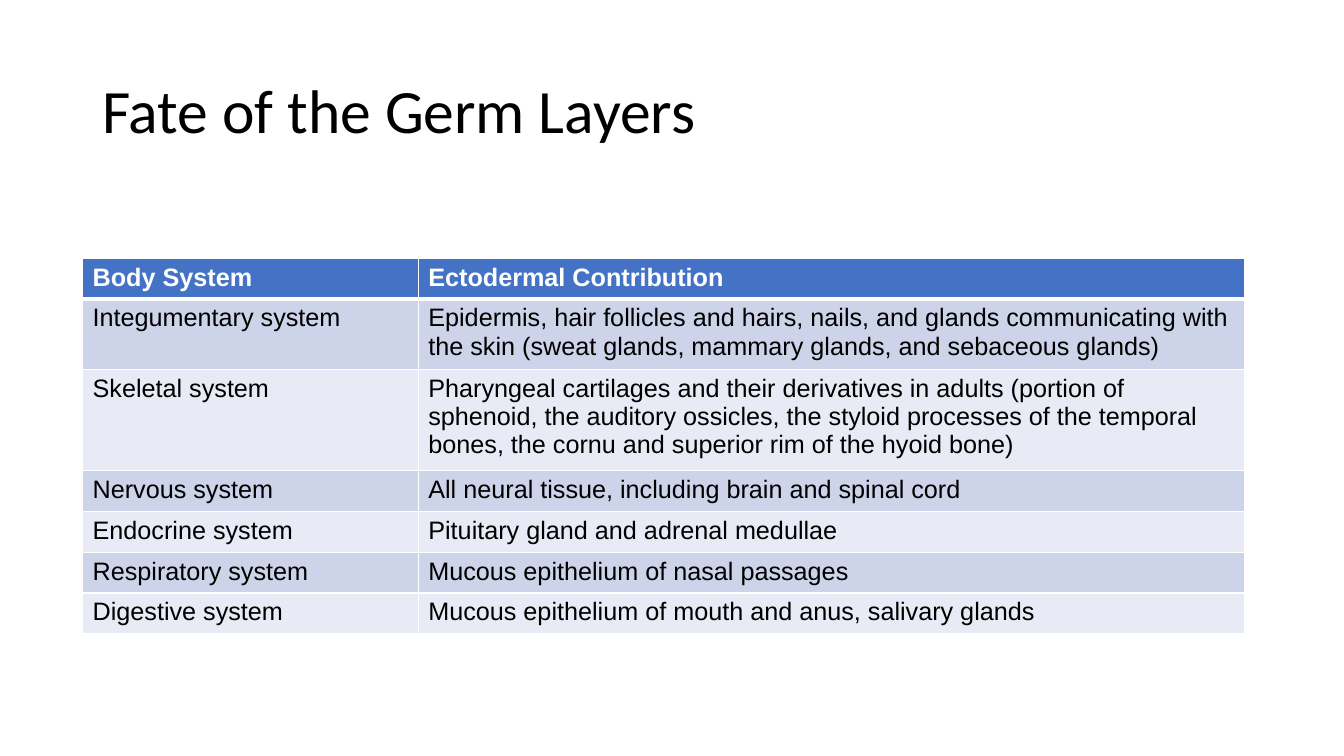
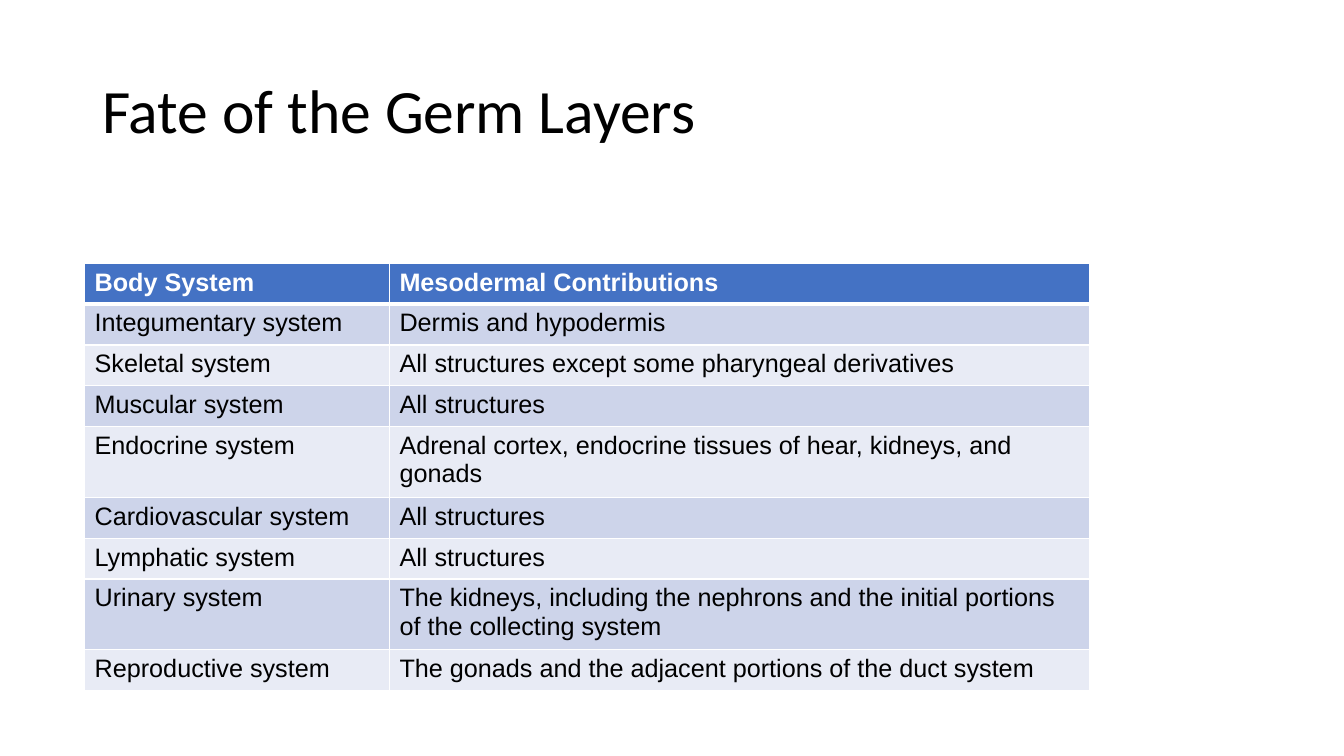
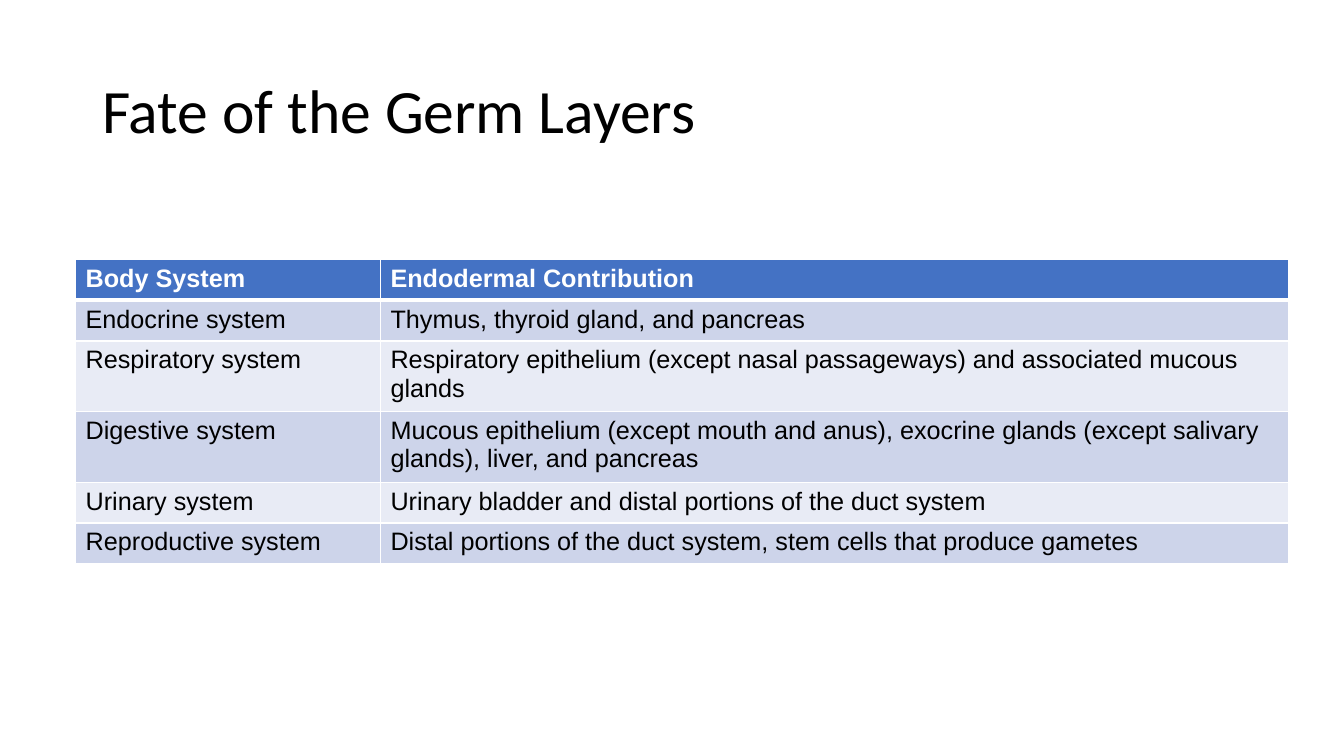
from lxml.etree import SubElement
from pptx import Presentation
from pptx.dml.color import RGBColor
from pptx.enum.text import MSO_ANCHOR
from pptx.oxml.ns import qn
from pptx.util import Pt

COLORS = {
    "text": "000000",
    "white": "FFFFFF",
    "header": "4472C4",
    "odd": "CDD4EA",
    "even": "E8EBF5",
}
TITLE = {"name": "Calibri", "size": Pt(44), "bold": False}
HEADER = {"name": "Arial", "size": Pt(18), "bold": True}
BODY = HEADER | {"bold": False}
MARGINS = {
    "margin_left": Pt(7.2),
    "margin_top": Pt(3.6),
    "margin_right": Pt(7.2),
    "margin_bottom": Pt(3.6),
}
ROW_HEIGHT = 29.2

TABLES = [
    ((59, 184.4), (239.8, 590.4), [
        ("Body System", "Ectodermal Contribution"),
        ("Integumentary system",
         "Epidermis, hair follicles and hairs, nails, and glands communicating with "
         "the skin (sweat glands, mammary glands, and sebaceous glands)"),
        ("Skeletal system",
         "Pharyngeal cartilages and their derivatives in adults (portion of sphenoid, "
         "the auditory ossicles, the styloid processes of the temporal bones, "
         "the cornu and superior rim of the hyoid bone)"),
        ("Nervous system", "All neural tissue, including brain and spinal cord"),
        ("Endocrine system", "Pituitary gland and adrenal medullae"),
        ("Respiratory system", "Mucous epithelium of nasal passages"),
        ("Digestive system", "Mucous epithelium of mouth and anus, salivary glands"),
    ]),
    ((60.4, 188), (217.8, 500.2), [
        ("Body System", "Mesodermal Contributions"),
        ("Integumentary system", "Dermis and hypodermis"),
        ("Skeletal system", "All structures except some pharyngeal derivatives"),
        ("Muscular system", "All structures"),
        ("Endocrine system",
         "Adrenal cortex, endocrine tissues of hear, kidneys, and gonads"),
        ("Cardiovascular system", "All structures"),
        ("Lymphatic system", "All structures"),
        ("Urinary system",
         "The kidneys, including the nephrons and the initial portions "
         "of the collecting system"),
        ("Reproductive system",
         "The gonads and the adjacent portions of the duct system"),
    ]),
    ((54, 185.2), (217.8, 648.8), [
        ("Body System", "Endodermal Contribution"),
        ("Endocrine system", "Thymus, thyroid gland, and pancreas"),
        ("Respiratory system",
         "Respiratory epithelium (except nasal passageways) and associated mucous glands"),
        ("Digestive system",
         "Mucous epithelium (except mouth and anus), exocrine glands "
         "(except salivary glands), liver, and pancreas"),
        ("Urinary system", "Urinary bladder and distal portions of the duct system"),
        ("Reproductive system",
         "Distal portions of the duct system, stem cells that produce gametes"),
    ]),
]


def apply(target, values):
    for name, value in values.items():
        setattr(target, name, value)


class Deck:
    def __init__(self):
        self.presentation = Presentation()
        apply(self.presentation, {"slide_width": Pt(960), "slide_height": Pt(540)})
        self.slide = None

    def add_slide(self):
        self.slide = self.presentation.slides.add_slide(self.presentation.slide_layouts[6])

    def add_text(self, paragraph, text, font, color):
        run = paragraph.add_run()
        run.text = text
        apply(run.font, font)
        run.font.color.rgb = RGBColor.from_string(COLORS[color])

    def title(self, text):
        shape = self.slide.shapes.add_textbox(Pt(66), Pt(28.8), Pt(828), Pt(104.4))
        frame = shape.text_frame
        apply(frame, MARGINS | {"word_wrap": True, "vertical_anchor": MSO_ANCHOR.MIDDLE})
        paragraph = frame.paragraphs[0]
        paragraph.line_spacing = 0.9
        self.add_text(paragraph, text, TITLE, "text")

    def border(self, cell, side, width):
        properties = cell._tc.get_or_add_tcPr()
        line = SubElement(properties, qn(f"a:ln{side}"), w=str(Pt(width)))
        fill = SubElement(line, qn("a:solidFill"))
        SubElement(fill, qn("a:srgbClr"), val=COLORS["white"])

    def cell(self, cell, text, row):
        apply(cell, MARGINS)
        widths = {"L": 1, "R": 1, "T": 3 if row == 1 else 1, "B": 3 if row == 0 else 1}
        for side, width in widths.items():
            self.border(cell, side, width)
        fill = "header" if row == 0 else ("even", "odd")[row % 2]
        cell.fill.solid()
        cell.fill.fore_color.rgb = RGBColor.from_string(COLORS[fill])
        font, color = (HEADER, "white") if row == 0 else (BODY, "text")
        self.add_text(cell.text_frame.paragraphs[0], text, font, color)

    def table(self, position, widths, rows):
        left, top = position
        shape = self.slide.shapes.add_table(
            len(rows), len(widths), Pt(left), Pt(top),
            Pt(sum(widths)), Pt(ROW_HEIGHT * len(rows)))
        table = shape.table
        for column, width in zip(table.columns, widths):
            column.width = Pt(width)
        for row, texts in enumerate(rows):
            table.rows[row].height = Pt(ROW_HEIGHT)
            for column, text in enumerate(texts):
                self.cell(table.cell(row, column), text, row)


def main():
    deck = Deck()
    for position, widths, rows in TABLES:
        deck.add_slide()
        deck.title("Fate of the Germ Layers")
        deck.table(position, widths, rows)
    deck.presentation.save("out.pptx")


if __name__ == "__main__":
    main()
